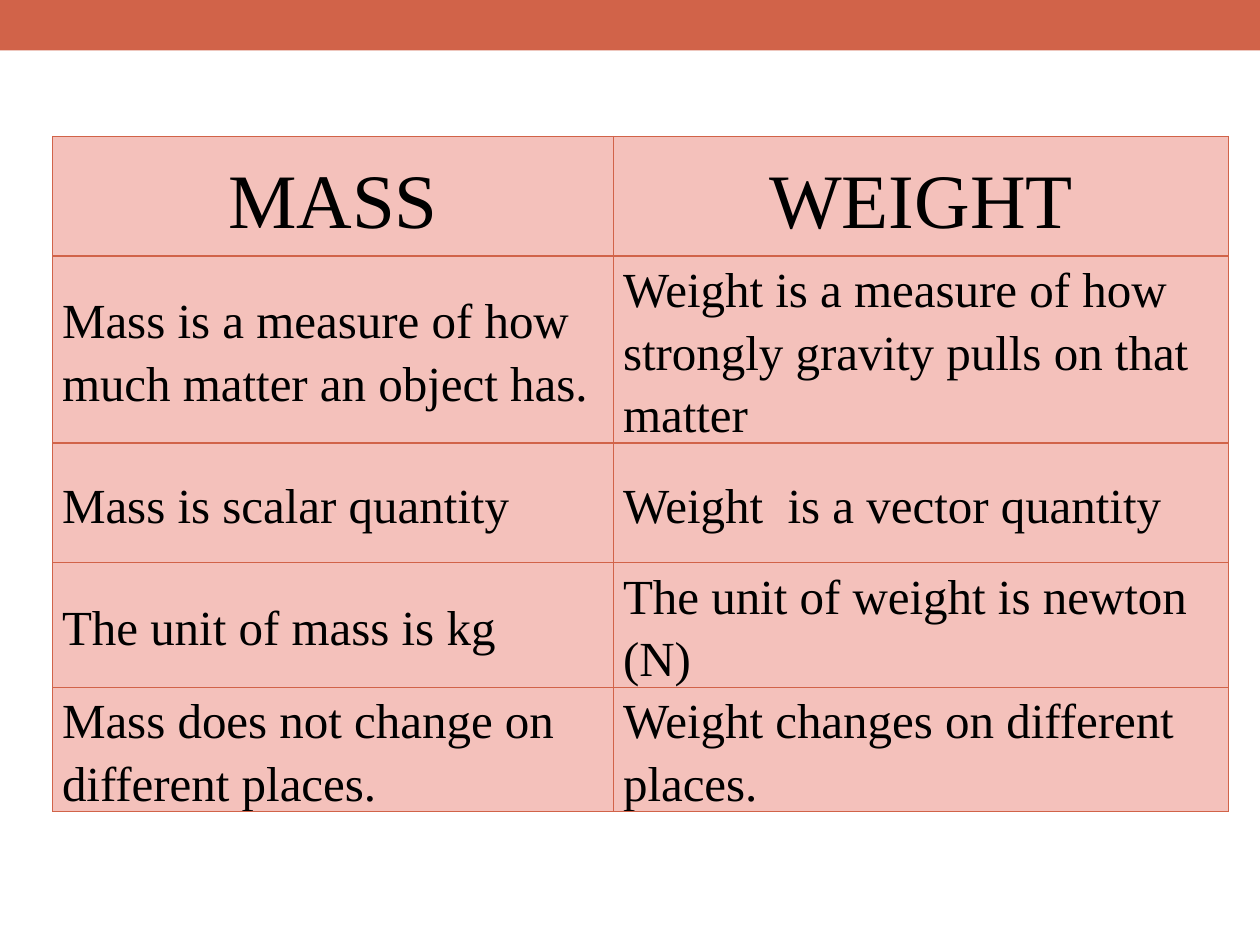
"""Build a slide with a table comparing mass and weight."""
from lxml import etree
from pptx import Presentation
from pptx import util as u
from pptx.dml import color
from pptx.enum import shapes, text
from pptx.oxml import ns

COLOURS = {"accent": "D16349", "cell": "F4C1BB", "text": "000000"}
COMPARISON = [
    ("MASS", "WEIGHT"),
    ("Mass is a measure of how much matter an object has.",
     "Weight is a measure of how strongly gravity pulls on that matter"),
    ("Mass is scalar quantity", "Weight  is a vector quantity"),
    ("The unit of mass is kg", "The unit of weight is newton (N)"),
    ("Mass does not change on different places.",
     "Weight changes on different places."),
]
COLUMN_WIDTHS = (u.Cm(11.31), u.Cm(12.4))
ROW_HEIGHT = u.Cm(2.41)
CELL_FORMAT = {
    "margin_left": u.Cm(0.19),
    "margin_right": u.Cm(0.19),
    "margin_top": 0,
    "margin_bottom": 0,
    "vertical_anchor": text.MSO_ANCHOR.MIDDLE,
}
HEADING = {"size": u.Pt(44), "align": text.PP_ALIGN.CENTER}
STATEMENT = {"size": u.Pt(28), "align": text.PP_ALIGN.LEFT}


def paint(fill, name):
    fill.solid()
    fill.fore_color.rgb = color.RGBColor.from_string(COLOURS[name])


def add_borders(cell):
    properties = cell._tc.get_or_add_tcPr()
    for side in ("a:lnL", "a:lnR", "a:lnT", "a:lnB"):
        border = etree.SubElement(properties, ns.qn(side), w=str(u.Pt(0.75)))
        solid = etree.SubElement(border, ns.qn("a:solidFill"))
        etree.SubElement(solid, ns.qn("a:srgbClr"), val=COLOURS["accent"])


deck = Presentation()
deck.slide_width, deck.slide_height = u.Cm(25.4), u.Cm(19.05)
slide = deck.slides.add_slide(deck.slide_layouts[6])

top_band = slide.shapes.add_shape(
    shapes.MSO_SHAPE.RECTANGLE, 0, 0, deck.slide_width, u.Cm(1.02))
top_band.shadow.inherit = False
paint(top_band.fill, "accent")
top_band.line.fill.background()

comparison = slide.shapes.add_table(
    len(COMPARISON), len(COLUMN_WIDTHS), u.Cm(1.06), u.Cm(2.75),
    sum(COLUMN_WIDTHS), ROW_HEIGHT * len(COMPARISON)).table
for column, width in zip(comparison.columns, COLUMN_WIDTHS):
    column.width = width

for row, wordings in enumerate(COMPARISON):
    comparison.rows[row].height = ROW_HEIGHT
    style = STATEMENT if row else HEADING
    for col, wording in enumerate(wordings):
        cell = comparison.cell(row, col)
        for name, value in CELL_FORMAT.items():
            setattr(cell, name, value)
        add_borders(cell)
        paint(cell.fill, "cell")
        paragraph = cell.text_frame.paragraphs[0]
        paragraph.alignment = style["align"]
        paragraph.line_spacing = 1.15
        run = paragraph.add_run()
        run.text = wording
        font_format = {"name": "Times New Roman", "size": style["size"], "bold": False}
        for name, value in font_format.items():
            setattr(run.font, name, value)
        paint(run.font.fill, "text")

deck.save("out.pptx")
